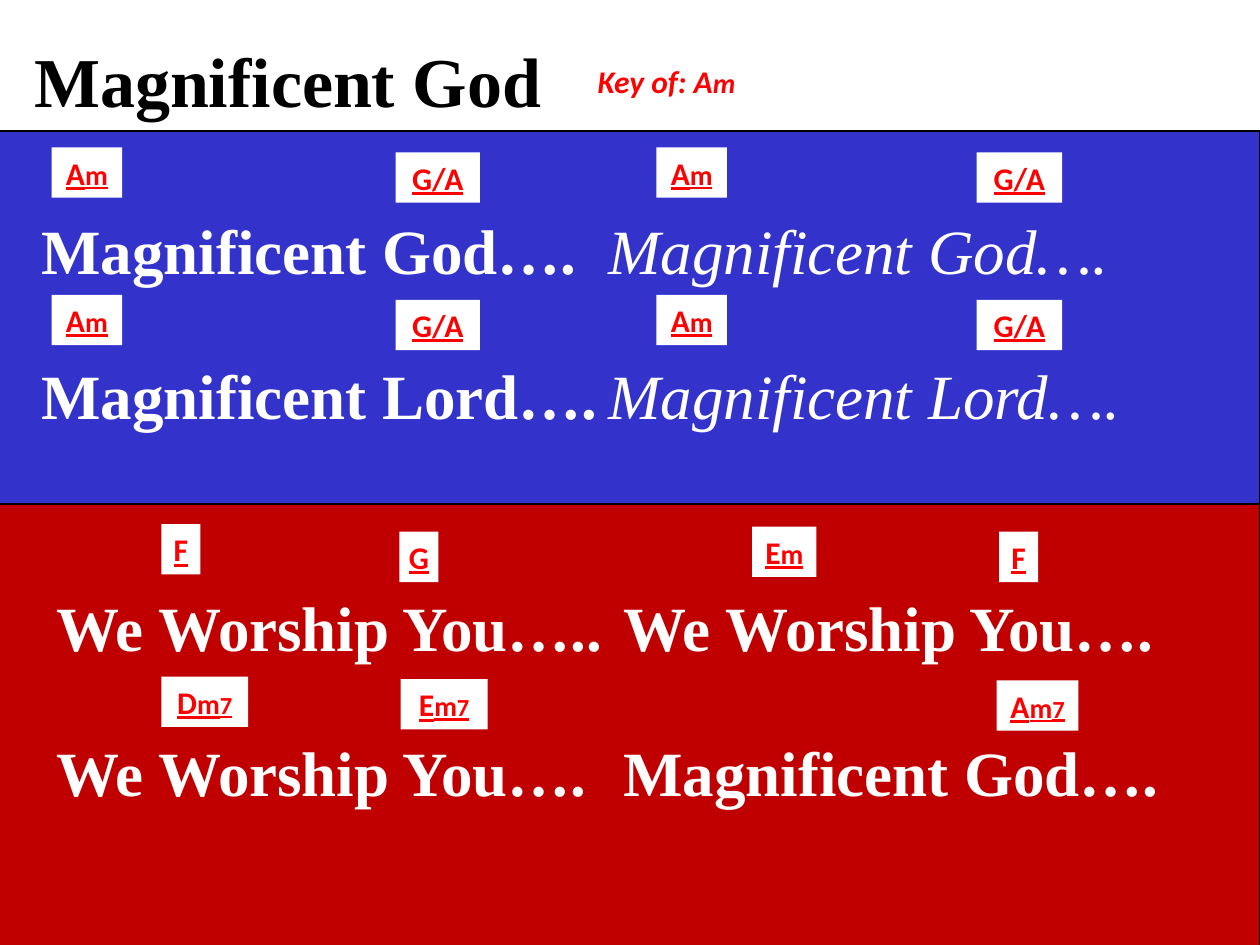
from lxml import etree
from pptx import Presentation
from pptx.dml.color import RGBColor
from pptx.enum.shapes import MSO_SHAPE
from pptx.enum.text import MSO_ANCHOR, PP_ALIGN
from pptx.oxml.ns import qn
from pptx.util import Inches, Pt

RECTANGLE = MSO_SHAPE.RECTANGLE
TOP = MSO_ANCHOR.TOP
LEFT, CENTER = PP_ALIGN.LEFT, PP_ALIGN.CENTER
WHITE, BLACK, BLUE, RED, CHORD_RED = "FFFFFF", "000000", "3333CC", "C00000", "FF0000"
SERIF, SANS = "Times New Roman", "Calibri"
BAND_LEFT, BAND_WIDTH = -0.02, 10.02
CHORD_HEIGHT = 0.4
CHORD_SIZES = (18, 16, 14)  # root, minor sign, seventh

# Chord rows: (left, top, width, root, minor sign, seventh)
VERSE_CHORDS = [(0.41, 1.17, 0.56, "A", "m"), (3.14, 1.21, 0.67, "G/A"),
                (5.21, 1.17, 0.56, "A", "m"), (7.75, 1.21, 0.68, "G/A")]
VERSE_ROW_STEPS = (0, 1.17)
CHORUS_CHORDS = [(1.28, 4.16, 0.31, "F"), (3.17, 4.22, 0.31, "G"),
                 (5.97, 4.18, 0.51, "E", "m"), (7.93, 4.22, 0.31, "F"),
                 (1.28, 5.37, 0.69, "D", "m", "7"), (3.18, 5.39, 0.69, "E", "m", "7"),
                 (7.91, 5.4, 0.65, "A", "m", "7")]

# Lyric lines: (left half, right half, right half sung as echo, indent, tab, space before)
LYRICS = [("Magnificent God….", "Magnificent God….", True, 0.25, 5.12, None),
          ("Magnificent Lord….", "Magnificent Lord….", True, 0.25, 5.17, None),
          ("We Worship You…..", "We Worship You….", False, 0.37, 5.07, 68),
          ("We Worship You….", "Magnificent God….", False, 0.37, 5.07, None)]


def color(hex_string):
    return RGBColor.from_string(hex_string)


def box(left, top, width, height):
    return [Inches(value) for value in (left, top, width, height)]


def add_run(paragraph, text, size, font_name, hex_color, **style):
    run = paragraph.add_run()
    run.text = text
    values = {"size": Pt(size), "name": font_name, "bold": True, **style}
    for attribute, value in values.items():
        setattr(run.font, attribute, value)
    run.font.color.rgb = color(hex_color)


def space_half_line(paragraph):
    """Put half a line of space before the paragraph."""
    paragraph.space_before = Pt(0)
    spacing = paragraph._p.pPr.find(qn("a:spcBef"))
    spacing.remove(spacing[0])
    etree.SubElement(spacing, qn("a:spcPct"), val="50000")


def set_column(paragraph, indent, tab):
    """Indent the left half and set a tab stop for the right half."""
    properties = paragraph._p.get_or_add_pPr()
    properties.set("marL", str(Inches(indent)))
    properties.set("indent", "0")
    tabs = etree.SubElement(properties, qn("a:tabLst"))
    etree.SubElement(tabs, qn("a:tab"), pos=str(Inches(tab)), algn="l")


def add_rectangle(slide, place, fill, line=None):
    shape = slide.shapes.add_shape(RECTANGLE, *box(*place))
    shape.shadow.inherit = False
    shape.fill.solid()
    shape.fill.fore_color.rgb = color(fill)
    if line:
        shape.line.color.rgb = color(line)
        shape.line.width = Pt(0.75)
    else:
        shape.line.fill.background()
    return shape


def add_label(slide, place, parts, **style):
    """Add a white box of red text whose parts shrink step by step."""
    frame = add_rectangle(slide, place, WHITE).text_frame
    frame.word_wrap = False
    frame.vertical_anchor = TOP
    paragraph = frame.paragraphs[0]
    paragraph.alignment = CENTER
    space_half_line(paragraph)
    for text, size in zip(parts, CHORD_SIZES):
        add_run(paragraph, text, size, SANS, CHORD_RED, **style)


def add_chord(slide, left, top, width, *parts):
    add_label(slide, (left, top, width, CHORD_HEIGHT), parts, underline=True)


def set_title(slide, text):
    title = slide.shapes.title
    title.left, title.top, title.width, title.height = box(0.17, 0.25, 4.41, 0.77)
    title.fill.solid()
    title.fill.fore_color.rgb = color(WHITE)
    frame = title.text_frame
    frame.word_wrap = False
    frame.vertical_anchor = TOP
    paragraph = frame.paragraphs[0]
    paragraph.alignment = LEFT
    space_half_line(paragraph)
    add_run(paragraph, text, 40, SERIF, BLACK)


def add_lyrics(slide):
    frame = slide.shapes.add_textbox(*box(BAND_LEFT, 1.33, BAND_WIDTH, 5.25)).text_frame
    frame.word_wrap = True
    for number, (lead, answer, echo, indent, tab, space) in enumerate(LYRICS):
        paragraph = frame.add_paragraph() if number else frame.paragraphs[0]
        paragraph.line_spacing = 1.5
        if space:
            paragraph.space_before = Pt(space)
        else:
            space_half_line(paragraph)
        set_column(paragraph, indent, tab)
        add_run(paragraph, lead + "\t", 36, SERIF, WHITE)
        add_run(paragraph, answer, 36, SERIF, WHITE, bold=not echo, italic=echo)


def main():
    presentation = Presentation()
    presentation.slide_width, presentation.slide_height = Inches(10), Inches(7.5)
    slide = presentation.slides.add_slide(presentation.slide_layouts[5])

    # Title, verse band, chorus band and words
    set_title(slide, "Magnificent God")
    add_rectangle(slide, (BAND_LEFT, 1.04, BAND_WIDTH, 2.96), BLUE, BLACK)
    add_rectangle(slide, (BAND_LEFT, 4, BAND_WIDTH, 3.67), RED, BLACK)
    add_lyrics(slide)

    # Key and chords
    add_label(slide, (4.58, 0.44, 1.42, CHORD_HEIGHT), ("Key of: A", "m"), italic=True)
    for step in VERSE_ROW_STEPS:
        for left, top, width, *parts in VERSE_CHORDS:
            add_chord(slide, left, top + step, width, *parts)
    for chord in CHORUS_CHORDS:
        add_chord(slide, *chord)

    presentation.save("out.pptx")


if __name__ == "__main__":
    main()
